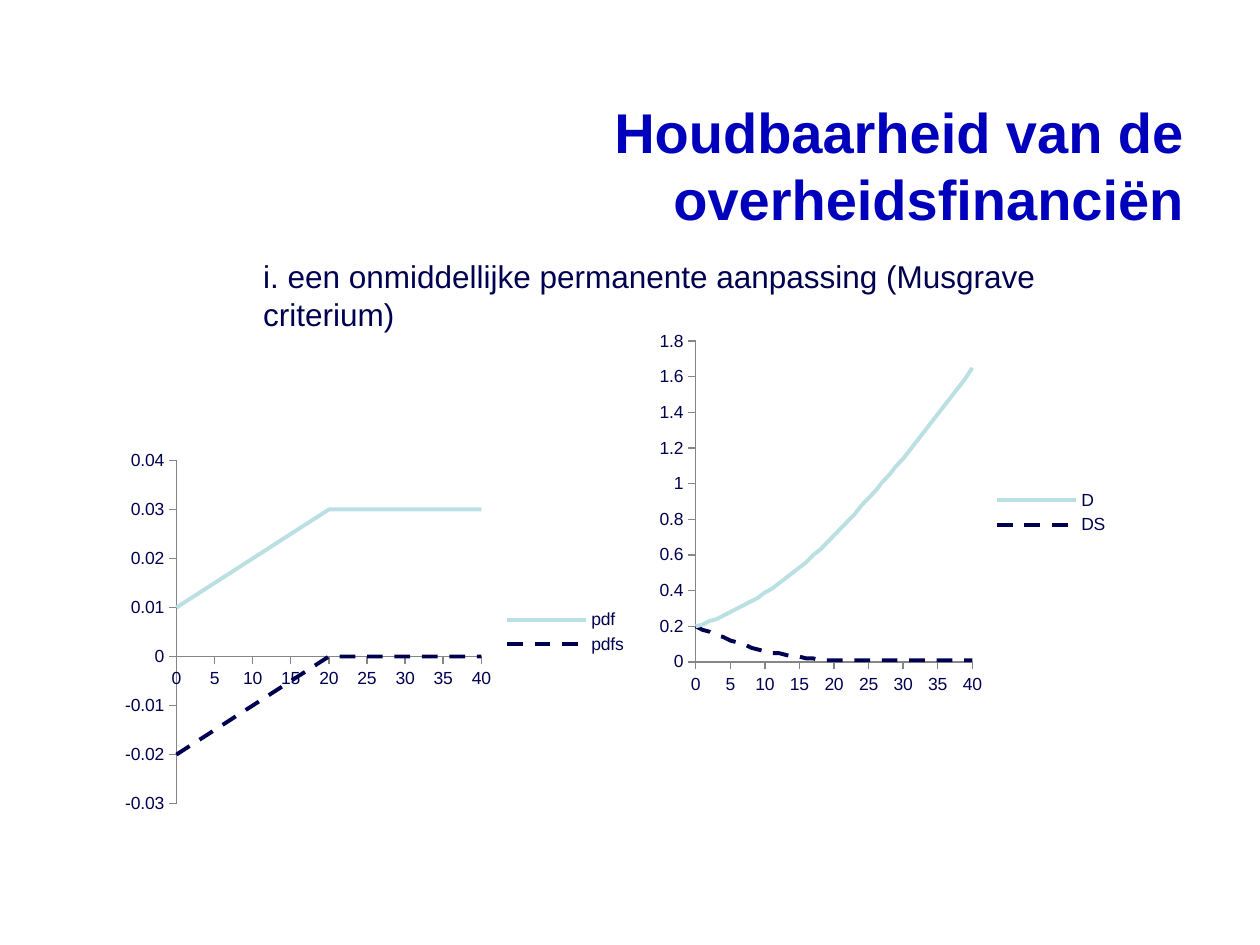
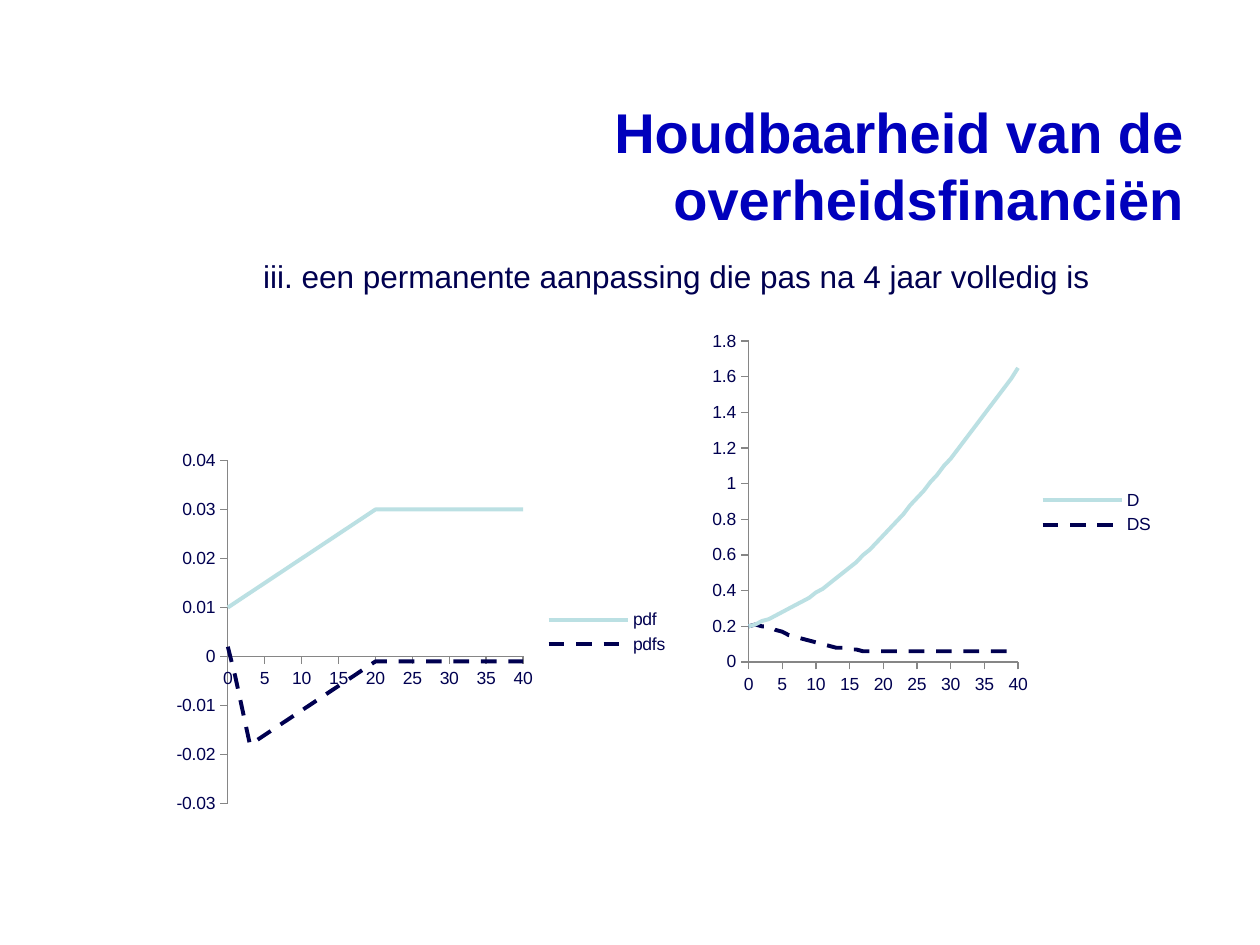
from dataclasses import dataclass
from itertools import accumulate

from pptx import Presentation
from pptx.chart.data import XyChartData
from pptx.dml.color import RGBColor
from pptx.enum.chart import XL_CHART_TYPE as ChartType, XL_LEGEND_POSITION as LegendPosition
from pptx.enum.chart import XL_TICK_MARK as TickMark
from pptx.enum.dml import MSO_LINE_DASH_STYLE as Dash
from pptx.enum.text import MSO_ANCHOR as Anchor, MSO_AUTO_SIZE as AutoSize, PP_ALIGN as Align
from pptx.util import Pt


@dataclass(frozen=True)
class Theme:
    font: str = "Arial"
    title_color: RGBColor = RGBColor(0x00, 0x00, 0xBC)
    ink: RGBColor = RGBColor(0x00, 0x00, 0x50)
    pale: RGBColor = RGBColor(0xBB, 0xE0, 0xE3)
    axis: RGBColor = RGBColor(0x86, 0x86, 0x86)
    title_size: Pt = Pt(32)
    body_size: Pt = Pt(18)
    chart_size: Pt = Pt(10)
    curve_width: Pt = Pt(2.25)
    axis_width: Pt = Pt(0.75)


theme = Theme()
curve_looks = ((theme.pale, Dash.SOLID), (theme.ink, Dash.DASH))


def style_font(font, size, color, bold=False):
    font.name, font.size, font.bold = theme.font, size, bold
    font.color.rgb = color


def debt_from(deficits):
    """Each year the debt bears interest and the deficit of the year before is added."""
    return list(accumulate(deficits[:-1], lambda debt, deficit: debt * (1 + interest) + deficit,
                           initial=first_debt))


# The deficit climbs for twenty years, then stays level
last_year = 40
years = range(last_year + 1)
interest = 0.015
first_debt = 0.2
deficit = [min(0.01 + 0.001 * year, 0.03) for year in years]
debt = debt_from(deficit)

# Scenario text, its box height, years until the cut is complete,
# (left, width) of the deficit and debt charts, smoothing of the deficit chart
scenarios = [
    ("i. een onmiddellijke permanente aanpassing (Musgrave criterium)", 51, 1,
     (65.5, 300.2), (371.5, 269.3), True),
    ("iii. een permanente aanpassing die pas na 4 jaar volledig is", 29, 4,
     (95, 294.5), (401.8, 265), False),
]
chart_height = 216
deficit_top, debt_top = 253.2, 185

deck = Presentation()
deck.slide_width, deck.slide_height = Pt(720), Pt(540)

for scenario, text_height, phase_years, deficit_place, debt_place, smooth_deficit in scenarios:
    page = deck.slides.add_slide(deck.slide_layouts[5])

    title = page.shapes.title
    title.left, title.top, title.width, title.height = map(Pt, (82, 49, 602, 90))
    frame = title.text_frame
    frame.text = "Houdbaarheid van de overheidsfinanciën"
    frame.auto_size, frame.word_wrap = AutoSize.NONE, True
    frame.vertical_anchor = Anchor.MIDDLE
    para = frame.paragraphs[0]
    para.alignment = Align.RIGHT
    style_font(para.runs[0].font, theme.title_size, theme.title_color, bold=True)

    frame = page.shapes.add_textbox(*map(Pt, (107.3, 143.3, 561.6, text_height))).text_frame
    frame.text = scenario
    frame.word_wrap = True
    frame.auto_size = AutoSize.SHAPE_TO_FIT_TEXT
    para = frame.paragraphs[0]
    para.level = 1
    indent = para._p.get_or_add_pPr()
    indent.set("marL", str(Pt(36)))
    indent.set("indent", "0")
    style_font(para.runs[0].font, theme.body_size, theme.ink)

    # The final rise in debt is linear in the cut, so a trial cut of 1
    # is enough to find the cut that brings that rise to zero
    phase_in = [min((year + 1) / phase_years, 1) for year in years]
    trial_debt = debt_from([gap - share for gap, share in zip(deficit, phase_in)])
    rise_without_cut = debt[-1] - debt[-2]
    rise_with_trial = trial_debt[-1] - trial_debt[-2]
    cut = rise_without_cut / (rise_without_cut - rise_with_trial)
    adjusted_deficit = [gap - cut * share for gap, share in zip(deficit, phase_in)]
    adjusted_debt = debt_from(adjusted_deficit)

    # Curves, decimals, value axis (low, high, step), (left, width), top, smoothing
    charts = [
        ({"pdf": deficit, "pdfs": adjusted_deficit}, 3, (-0.03, 0.04, 0.01),
         deficit_place, deficit_top, smooth_deficit),
        ({"D": debt, "DS": adjusted_debt}, 2, (0, 1.8, 0.2),
         debt_place, debt_top, False),
    ]
    for curves, decimals, value_range, (left, width), top, smooth in charts:
        data = XyChartData()
        for name, values in curves.items():
            series = data.add_series(name)
            for year, value in zip(years, values):
                series.add_data_point(year, round(value, decimals) + 0.0)  # turns -0.0 into 0.0

        kind = ChartType.XY_SCATTER_SMOOTH_NO_MARKERS if smooth else ChartType.XY_SCATTER_LINES_NO_MARKERS
        box = map(Pt, (left, top, width, chart_height))
        chart = page.shapes.add_chart(kind, *box, data).chart
        style_font(chart.font, theme.chart_size, theme.ink)
        chart.has_title = False
        chart.has_legend = True
        chart.legend.position = LegendPosition.RIGHT
        chart.legend.include_in_layout = False

        axis_ranges = ((chart.category_axis, (0, last_year, 5)), (chart.value_axis, value_range))
        for axis, (low, high, step) in axis_ranges:
            axis.minimum_scale, axis.maximum_scale, axis.major_unit = low, high, step
            axis.has_major_gridlines = False
            axis.major_tick_mark, axis.minor_tick_mark = TickMark.OUTSIDE, TickMark.NONE
            axis.tick_labels.number_format = "General"
            axis.tick_labels.number_format_is_linked = False
            axis.format.line.color.rgb = theme.axis
            axis.format.line.width = theme.axis_width

        for series, (color, dash) in zip(chart.plots[0].series, curve_looks):
            series.smooth = smooth
            line = series.format.line
            line.color.rgb, line.dash_style, line.width = color, dash, theme.curve_width

deck.save("out.pptx")
